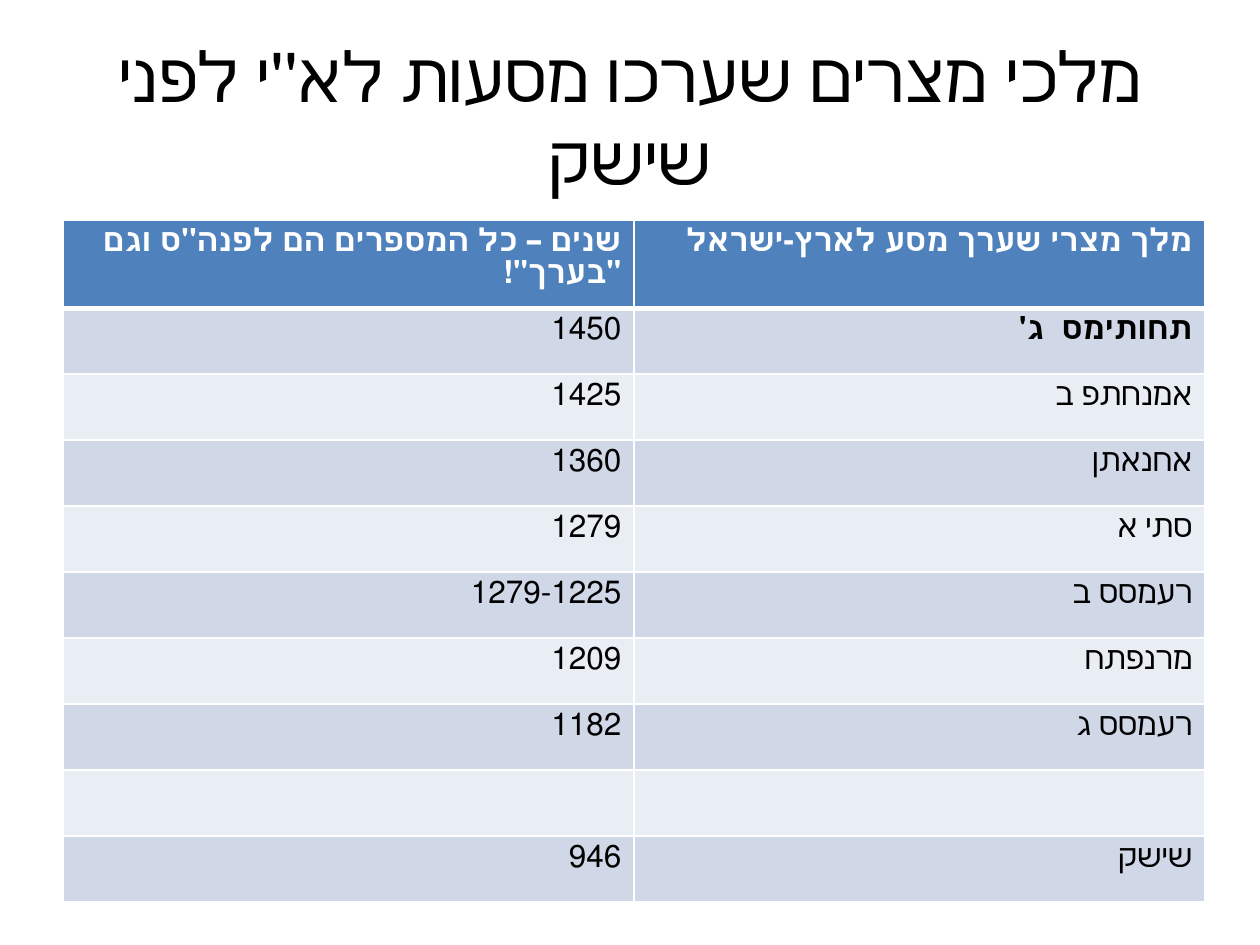
from lxml.etree import SubElement
from pptx import Presentation
from pptx.dml.color import RGBColor
from pptx.enum.text import MSO_ANCHOR, PP_ALIGN
from pptx.oxml.ns import qn
from pptx.util import Emu, Pt

PX = 914400 / 126
FONT = "Calibri"
THIN, THICK = 1, 3
COLOURS = {
    "text": "000000",
    "white": "FFFFFF",
    "header": "4F81BD",
    "odd": "D0D8E8",
    "even": "E9EDF4",
}
TITLE = "מלכי מצרים שערכו מסעות לא''י לפני שישק"
HEADERS = ("שנים – כל המספרים הם לפנה''ס וגם \"בערך\"!", "מלך מצרי שערך מסע לארץ-ישראל")
BOLD_KING = "תחותימס  ג'"
KINGS = [
    ("1450", BOLD_KING),
    ("1425", "אמנחתפ ב"),
    ("1360", "אחנאתן"),
    ("1279", "סתי א"),
    ("1279-1225", "רעמסס ב"),
    ("1209", "מרנפתח"),
    ("1182", "רעמסס ג"),
    ("", ""),
    ("946", "שישק"),
]


def px(length):
    return Emu(round(length * PX))


def colour(name):
    return RGBColor.from_string(COLOURS[name])


def write(frame, text, size=18, ink="text", bold=False, align=PP_ALIGN.RIGHT, rtl=True):
    para = frame.paragraphs[0]
    para.alignment = align
    if rtl:
        para._p.get_or_add_pPr().set("rtl", "1")
    if text:
        span = para.add_run()
        span.text = text
        span.font.name = FONT
        span.font.size = Pt(size)
        span.font.bold = bold
        span.font.color.rgb = colour(ink)


class SlideBuilder:
    def __init__(self, slide):
        self.slide = slide

    def title(self, text, left, top, width, height):
        box = self.slide.shapes.add_textbox(px(left), px(top), px(width), px(height))
        frame = box.text_frame
        frame.word_wrap = True
        frame.vertical_anchor = MSO_ANCHOR.MIDDLE
        write(frame, text, size=39.6, align=PP_ALIGN.CENTER, rtl=False)

    def cell(self, cell, text, fill, top=THIN, bottom=THIN, **style):
        # Borders must precede the fill in the cell properties
        properties = cell._tc.get_or_add_tcPr()
        borders = {"lnL": THIN, "lnR": THIN, "lnT": top, "lnB": bottom}
        for side, width in borders.items():
            line = SubElement(properties, qn(f"a:{side}"), w=str(Pt(width)))
            line_fill = SubElement(line, qn("a:solidFill"))
            SubElement(line_fill, qn("a:srgbClr"), val=COLOURS["white"])
        cell.fill.solid()
        cell.fill.fore_color.rgb = colour(fill)
        write(cell.text_frame, text, **style)

    def table(self, headers, rows, left, top, column_width, row_height):
        row_count, column_count = len(rows) + 1, len(headers)
        table = self.slide.shapes.add_table(
            row_count, column_count, px(left), px(top),
            px(column_width * column_count), px(row_height * row_count)).table
        for column in table.columns:
            column.width = px(column_width)
        for row in table.rows:
            row.height = px(row_height)

        # Header row, with a thick rule below it
        for column, text in enumerate(headers):
            self.cell(table.cell(0, column), text, "header", bottom=THICK,
                      ink="white", bold=True)

        # Body rows in alternating bands
        for index, row in enumerate(rows, start=1):
            band = "odd" if index % 2 else "even"
            rule = THICK if index == 1 else THIN
            for column, text in enumerate(row):
                self.cell(table.cell(index, column), text, band, top=rule,
                          bold=text == BOLD_KING)


def main():
    deck = Presentation()
    deck.slide_width, deck.slide_height = px(1260), px(945)
    page = SlideBuilder(deck.slides.add_slide(deck.slide_layouts[6]))

    # Title
    page.title(TITLE, left=63, top=37, width=1134, height=158)

    # Kings and the years of their campaigns
    page.table(HEADERS, KINGS, left=63, top=220, column_width=571, row_height=66)
    deck.save("out.pptx")


if __name__ == "__main__":
    main()
